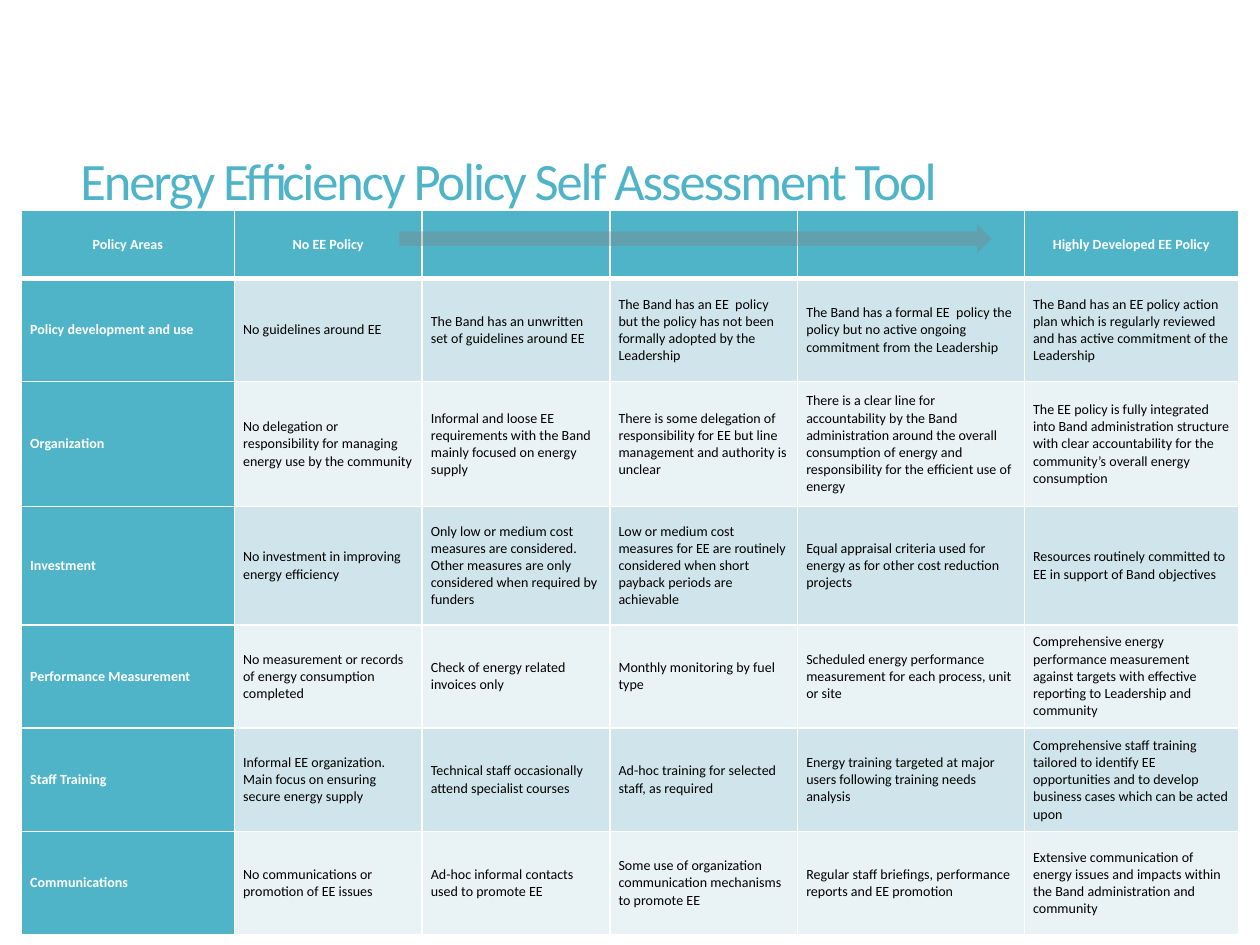
from dataclasses import dataclass

from lxml import etree
from pptx import Presentation
from pptx.dml.color import RGBColor
from pptx.enum.shapes import MSO_SHAPE
from pptx.enum.text import MSO_ANCHOR, PP_ALIGN
from pptx.oxml.ns import qn
from pptx.util import Inches, Pt

ARROW = MSO_SHAPE.RIGHT_ARROW
MIDDLE = MSO_ANCHOR.MIDDLE
LEFT = PP_ALIGN.LEFT
CENTER = PP_ALIGN.CENTER

WIDE, HIGH = 10, 7.5
FONT = "Calibri"
COLORS = {
    "teal": "50B4C8",
    "dark": "D0E5EB",
    "pale": "E9F2F5",
    "white": "FFFFFF",
    "black": "000000",
    "gray": "808080",
}
COLS = (1.69, 1.49, 1.49, 1.49, 1.8, 1.7)
ROWS = (0.54, 0.82, 0.99, 0.94, 0.82, 0.82, 0.82)
TEXTS = (
    ("Policy Areas", "No EE Policy", "", "", "", "Highly Developed EE Policy"),
    (
        "Policy development and use",
        "No guidelines around EE",
        "The Band has an unwritten set of guidelines around EE",
        "The Band has an EE  policy but the policy has not been formally adopted by the Leadership",
        "The Band has a formal EE  policy the policy but no active ongoing commitment from the Leadership",
        "The Band has an EE policy action plan which is regularly reviewed and has active commitment of the Leadership",
    ),
    (
        "Organization",
        "No delegation or responsibility for managing energy use by the community",
        "Informal and loose EE requirements with the Band mainly focused on energy supply",
        "There is some delegation of responsibility for EE but line management and authority is unclear",
        "There is a clear line for accountability by the Band administration around the overall consumption of energy and responsibility for the efficient use of energy",
        "The EE policy is fully integrated into Band administration structure with clear accountability for the community’s overall energy consumption",
    ),
    (
        "Investment",
        "No investment in improving energy efficiency",
        "Only low or medium cost measures are considered. Other measures are only considered when required by funders",
        "Low or medium cost measures for EE are routinely considered when short payback periods are achievable",
        "Equal appraisal criteria used for energy as for other cost reduction projects",
        "Resources routinely committed to EE in support of Band objectives",
    ),
    (
        "Performance Measurement",
        "No measurement or records of energy consumption completed",
        "Check of energy related invoices only",
        "Monthly monitoring by fuel type",
        "Scheduled energy performance measurement for each process, unit or site",
        "Comprehensive energy performance measurement against targets with effective reporting to Leadership and community",
    ),
    (
        "Staff Training",
        "Informal EE organization. Main focus on ensuring secure energy supply",
        "Technical staff occasionally attend specialist courses",
        "Ad-hoc training for selected staff, as required",
        "Energy training targeted at major users following training needs analysis",
        "Comprehensive staff training tailored to identify EE opportunities and to develop business cases which can be acted upon",
    ),
    (
        "Communications",
        "No communications or promotion of EE issues",
        "Ad-hoc informal contacts used to promote EE",
        "Some use of organization communication mechanisms to promote EE",
        "Regular staff briefings, performance reports and EE promotion",
        "Extensive communication of energy issues and impacts within the Band administration and community",
    ),
)


@dataclass(frozen=True)
class Box:
    left: float
    top: float
    width: float
    height: float

    def place(self) -> tuple:
        return tuple(map(Inches, (self.left, self.top, self.width, self.height)))


@dataclass(frozen=True)
class Style:
    fill: str
    ink: str
    bold: bool
    align: PP_ALIGN
    above: float
    below: float


TITLE = Box(0.54, 0.55, 8.84, 1.81)
GRID = Box(0.17, 1.67, sum(COLS), sum(ROWS))
TREND = Box(3.17, 1.78, 4.7, 0.23)


def tint(name: str) -> RGBColor:
    return RGBColor.from_string(COLORS[name])


def set_font(para, size: float, ink: str, bold: bool = False) -> None:
    font = para.font
    font.name, font.size, font.bold = FONT, Pt(size), bold
    font.color.rgb = tint(ink)


def add_title(slide, box: Box, text: str) -> None:
    frame = slide.shapes.add_textbox(*box.place()).text_frame
    frame.word_wrap = True
    frame.vertical_anchor = MIDDLE
    para = frame.paragraphs[0]
    para.line_spacing = 0.9
    run = para.add_run()
    run.text = text
    run._r.get_or_add_rPr().set("spc", "-120")
    set_font(para, 30, "teal")


def add_edge(cell, side: str, width: float) -> None:
    line = etree.SubElement(cell._tc.get_or_add_tcPr(), qn(f"a:ln{side}"), w=str(Pt(width)))
    fill = etree.SubElement(line, qn("a:solidFill"))
    etree.SubElement(fill, qn("a:srgbClr"), val=COLORS["white"])


def pick_style(row: int, col: int) -> Style:
    above = 3 if row == 1 else 1
    if row == 0:
        return Style("teal", "white", True, CENTER, above, 3)
    if col == 0:
        return Style("teal", "white", True, LEFT, above, 1)
    return Style("dark" if row % 2 else "pale", "black", False, LEFT, above, 1)


def fill_cell(cell, text: str, style: Style) -> None:
    for side, width in zip("LRTB", (1, 1, style.above, style.below)):
        add_edge(cell, side, width)
    cell.fill.solid()
    cell.fill.fore_color.rgb = tint(style.fill)
    cell.vertical_anchor = MIDDLE
    cell.margin_left = cell.margin_right = Inches(0.07)
    cell.margin_top = cell.margin_bottom = 0
    para = cell.text_frame.paragraphs[0]
    para.alignment = style.align
    para.space_after = Pt(5)
    if text:
        para.add_run().text = text
    set_font(para, 8, style.ink, style.bold)


def add_grid(slide, box: Box) -> None:
    table = slide.shapes.add_table(len(ROWS), len(COLS), *box.place()).table
    for col, width in zip(table.columns, COLS):
        col.width = Inches(width)
    for row, height in zip(table.rows, ROWS):
        row.height = Inches(height)
    for r, line in enumerate(TEXTS):
        for c, text in enumerate(line):
            fill_cell(table.cell(r, c), text, pick_style(r, c))


def add_trend(slide, box: Box) -> None:
    shape = slide.shapes.add_shape(ARROW, *box.place())
    shape.shadow.inherit = False
    shape.line.fill.background()
    shape.fill.solid()
    shape.fill.fore_color.rgb = tint("gray")
    color = shape._element.spPr.find(qn("a:solidFill"))[0]
    etree.SubElement(color, qn("a:alpha"), val="37000")


def main() -> None:
    deck = Presentation()
    deck.slide_width, deck.slide_height = Inches(WIDE), Inches(HIGH)
    slide = deck.slides.add_slide(deck.slide_layouts[6])
    add_title(slide, TITLE, "Energy Efficiency Policy Self Assessment Tool")
    add_grid(slide, GRID)
    add_trend(slide, TREND)
    deck.save("out.pptx")


if __name__ == "__main__":
    main()
